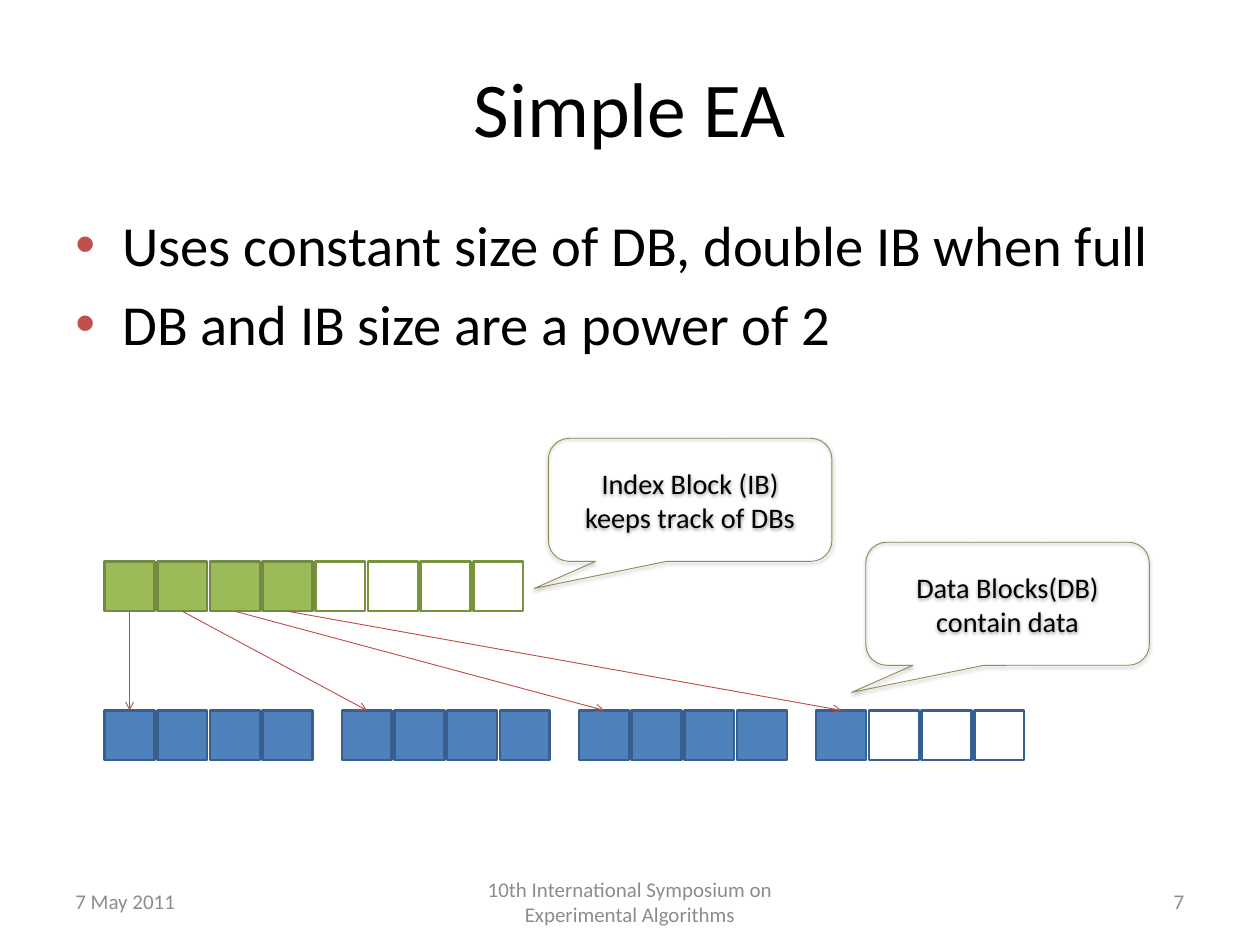
from lxml import etree
from pptx import Presentation
from pptx import util as u
from pptx.dml.color import RGBColor
from pptx.enum import shapes, text
from pptx.oxml.ns import qn

BLACK = RGBColor(0x00, 0x00, 0x00)
WHITE = RGBColor(0xFF, 0xFF, 0xFF)
GREY = RGBColor(0x8C, 0x8C, 0x8C)
GREEN = RGBColor(0x9B, 0xBB, 0x59)
GREEN_EDGE = RGBColor(0x73, 0x8A, 0x42)
EMPTY_GREEN_EDGE = RGBColor(0x77, 0x93, 0x3C)
BLUE = RGBColor(0x4F, 0x81, 0xBD)
BLUE_EDGE = RGBColor(0x3A, 0x5F, 0x8C)
EMPTY_BLUE_EDGE = RGBColor(0x37, 0x60, 0x92)
POINTER_RED = RGBColor(0xBF, 0x4C, 0x48)
BULLET_RED = RGBColor(0xC0, 0x50, 0x4D)
CALLOUT_EDGE = RGBColor(0x94, 0x8A, 0x54)

FONT = "Calibri"
CELL = 1.43
CELL_PITCH = 1.51
BLOCK_PITCH = 6.8
BLOCK_CELLS = 4
LEFT, CENTER, RIGHT = text.PP_ALIGN.LEFT, text.PP_ALIGN.CENTER, text.PP_ALIGN.RIGHT


def cm_box(box):
    return [u.Cm(length) for length in box]


def add_xml(parent, tag, **attributes):
    return etree.SubElement(parent, qn(tag), attributes)


def write(holder, lines, size, color=BLACK, align=LEFT, anchor=text.MSO_ANCHOR.MIDDLE,
          bullet=None):
    """Put one paragraph per line into a shape, bulleted if a bullet colour is given."""
    frame = holder.text_frame
    frame.word_wrap = True
    frame.vertical_anchor = anchor
    frame.margin_left = frame.margin_right = u.Cm(0.36)
    frame.margin_top = frame.margin_bottom = u.Cm(0.18)
    for number, line in enumerate(lines):
        paragraph = frame.add_paragraph() if number else frame.paragraphs[0]
        paragraph.alignment = align
        run = paragraph.add_run()
        run.text = line
        run.font.name = FONT
        run.font.size = u.Pt(size)
        run.font.color.rgb = color
        if bullet is not None:
            paragraph.space_before = u.Pt(size * 0.2)
            properties = paragraph._p.get_or_add_pPr()
            properties.set("marL", str(u.Cm(1.35)))
            properties.set("indent", str(-u.Cm(1.35)))
            add_xml(add_xml(properties, "a:buClr"), "a:srgbClr", val=str(bullet))
            add_xml(properties, "a:buFont", typeface="Arial")
            add_xml(properties, "a:buChar", char="•")


def add_text(slide, box, lines, size, **text_format):
    write(slide.shapes.add_textbox(*cm_box(box)), lines, size, **text_format)


def add_cell(slide, left, top, fill, edge):
    cell = slide.shapes.add_shape(shapes.MSO_SHAPE.RECTANGLE,
                                  *cm_box((left, top, CELL, CELL)))
    cell.shadow.inherit = False
    cell.fill.solid()
    cell.fill.fore_color.rgb = fill
    cell.line.color.rgb = edge
    cell.line.width = u.Pt(2)
    return cell


def add_cells(slide, left, top, count, used, full, empty):
    """Draw a row of cells; full and empty are (fill, edge) pairs."""
    return [add_cell(slide, left + i * CELL_PITCH, top, *(full if i < used else empty))
            for i in range(count)]


def add_pointer(slide, index_cell, data_cell):
    pointer = slide.shapes.add_connector(shapes.MSO_CONNECTOR.STRAIGHT, 0, 0, 0, 0)
    pointer.begin_connect(index_cell, 2)
    pointer.end_connect(data_cell, 0)
    pointer.line.color.rgb = POINTER_RED
    pointer.line.width = u.Pt(0.75)
    add_xml(pointer.line._get_or_add_ln(), "a:tailEnd", type="arrow")
    add_xml(pointer._element.spPr, "a:effectLst")


def add_callout(slide, box, label):
    callout = slide.shapes.add_shape(shapes.MSO_SHAPE.ROUNDED_RECTANGULAR_CALLOUT,
                                     *cm_box(box))
    for i, value in enumerate((-0.55, 0.72, 0.17)):
        callout.adjustments[i] = value
    callout.fill.background()
    callout.line.color.rgb = CALLOUT_EDGE
    callout.line.width = u.Pt(0.75)
    callout.shadow.inherit = False
    effects = callout._element.spPr.find(qn("a:effectLst"))
    shadow = add_xml(effects, "a:outerShdw", blurRad=str(u.Pt(3.1)), dist=str(u.Pt(1.6)),
                     dir="5400000", rotWithShape="0")
    add_xml(add_xml(shadow, "a:srgbClr", val=str(BLACK)), "a:alpha", val="38000")
    write(callout, [label], 23, align=CENTER)


def add_array_diagram(slide, left, top):
    """Draw the index block, the data blocks below it and their pointers."""
    index_cells = add_cells(slide, left, top, 8, 4,
                            (GREEN, GREEN_EDGE), (WHITE, EMPTY_GREEN_EDGE))
    data_blocks = [add_cells(slide, left + i * BLOCK_PITCH, top + 4.27, BLOCK_CELLS, used,
                             (BLUE, BLUE_EDGE), (WHITE, EMPTY_BLUE_EDGE))
                   for i, used in enumerate((4, 4, 4, 1))]
    for index_cell, block in zip(index_cells, data_blocks):
        add_pointer(slide, index_cell, block[0])
    add_callout(slide, (left + 12.72, top - 3.53, 8.13, 3.53),
                "Index Block (IB) keeps track of DBs")
    add_callout(slide, (left + 21.82, top - 0.55, 8.13, 3.53),
                "Data Blocks(DB) contain data")


def add_footer(slide, left, top, width, height):
    side, middle = 8.43, 11.43
    for offset, part_width, label, align in (
            (0, side, "7 May 2011", LEFT),
            ((width - middle) / 2, middle,
             "10th International Symposium on Experimental Algorithms", CENTER),
            (width - side, side, "7", RIGHT)):
        add_text(slide, (left + offset, top, part_width, height), [label], 17,
                 color=GREY, align=align)


def main():
    deck = Presentation()
    deck.slide_width, deck.slide_height = u.Cm(36.12), u.Cm(27.1)
    slide = deck.slides.add_slide(deck.slide_layouts[6])
    add_text(slide, (1.8, 0.94, 32.51, 4.22), ["Simple EA"], 63, align=CENTER)
    add_text(slide, (1.8, 5.84, 32.51, 9.4),
             ["Uses constant size of DB, double IB when full",
              "DB and IB size are a power of 2"],
             46, anchor=text.MSO_ANCHOR.TOP, bullet=BULLET_RED)
    add_array_diagram(slide, 3, 16.1)
    add_footer(slide, 1.8, 25.12, 32.51, 1.45)
    deck.save("out.pptx")


if __name__ == "__main__":
    main()
